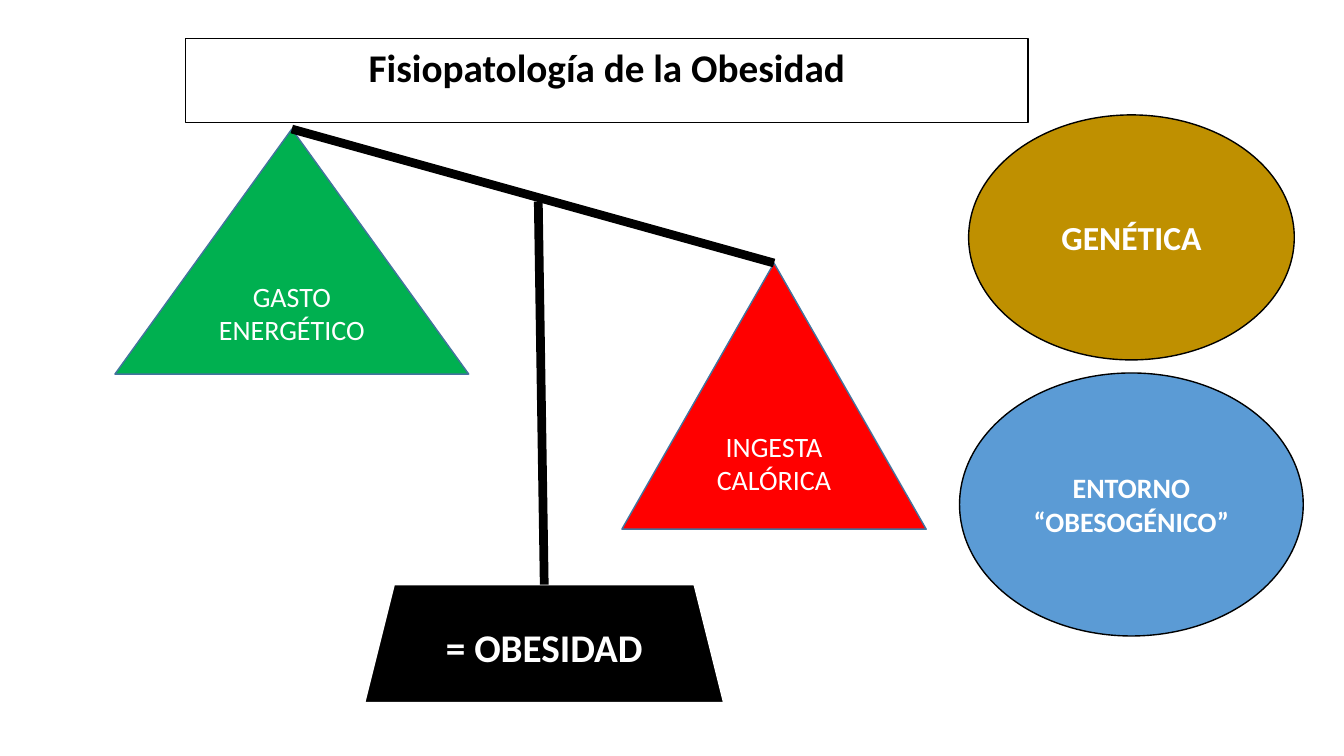
from dataclasses import dataclass

from lxml.etree import SubElement
from pptx import Presentation
from pptx.dml.color import RGBColor
from pptx.enum.shapes import MSO_CONNECTOR, MSO_SHAPE
from pptx.enum.text import MSO_ANCHOR, MSO_AUTO_SIZE, PP_ALIGN
from pptx.oxml.ns import qn
from pptx.shapes.autoshape import Shape
from pptx.slide import Slide
from pptx.text.text import TextFrame
from pptx.util import Pt


@dataclass(frozen=True)
class Theme:
    font: str = "Calibri"
    black: str = "000000"
    white: str = "FFFFFF"
    green: str = "00B050"
    red: str = "FF0000"
    gold: str = "BF9000"
    blue: str = "5B9BD5"
    pan_edge: str = "43739E"
    heading: float = 28
    factor: float = 24
    label: float = 20
    outline: float = 1
    bar: float = 6.25


@dataclass(frozen=True)
class Figure:
    kind: MSO_SHAPE
    left: float
    top: float
    width: float
    height: float
    fill: str
    edge: str
    text: str
    size: float
    bold: bool = True


THEME = Theme()
TOP_SITE = 0

EXPENDITURE_PAN = Figure(MSO_SHAPE.ISOSCELES_TRIANGLE, 82.1, 92.2, 252.7, 175, THEME.green,
                         THEME.pan_edge, "GASTO ENERGÉTICO", THEME.label, False)
INTAKE_PAN = Figure(MSO_SHAPE.ISOSCELES_TRIANGLE, 444.2, 187.9, 217.4, 190.1, THEME.red,
                    THEME.pan_edge, "INGESTA CALÓRICA", THEME.label, False)
BASE = Figure(MSO_SHAPE.TRAPEZOID, 260.6, 417.6, 256.3, 84.2, THEME.black,
              THEME.white, "= OBESIDAD", THEME.heading)
FACTORS = (
    Figure(MSO_SHAPE.OVAL, 691.9, 82.1, 232.6, 175, THEME.gold,
           THEME.black, "GENÉTICA", THEME.factor),
    Figure(MSO_SHAPE.OVAL, 685.4, 266.4, 245.5, 187.9, THEME.blue,
           THEME.black, "ENTORNO “OBESOGÉNICO”", THEME.label),
)


def write_text(frame: TextFrame, text: str, size: float, color: str, bold: bool) -> None:
    frame.word_wrap = True
    para = frame.paragraphs[0]
    para.alignment = PP_ALIGN.CENTER
    span = para.add_run()
    span.text = text
    span.font.name = THEME.font
    span.font.size = Pt(size)
    span.font.bold = bold
    span.font.color.rgb = RGBColor.from_string(color)


def paint(shape: Shape, fill: str, edge: str) -> None:
    shape.fill.solid()
    shape.fill.fore_color.rgb = RGBColor.from_string(fill)
    shape.line.color.rgb = RGBColor.from_string(edge)
    shape.line.width = Pt(THEME.outline)


def add_title(page: Slide, text: str) -> None:
    title = page.shapes.title
    title.left, title.top, title.width, title.height = Pt(132.5), Pt(27.4), Pt(601.9), Pt(41)
    paint(title, THEME.white, THEME.black)
    frame = title.text_frame
    frame.vertical_anchor = MSO_ANCHOR.TOP
    frame.auto_size = MSO_AUTO_SIZE.SHAPE_TO_FIT_TEXT
    write_text(frame, text, THEME.heading, THEME.black, True)


def add_figure(page: Slide, figure: Figure) -> Shape:
    shape = page.shapes.add_shape(figure.kind, Pt(figure.left), Pt(figure.top),
                                  Pt(figure.width), Pt(figure.height))
    shape.shadow.inherit = False
    paint(shape, figure.fill, figure.edge)
    shape.text_frame.vertical_anchor = MSO_ANCHOR.MIDDLE
    write_text(shape.text_frame, figure.text, figure.size, THEME.white, figure.bold)
    return shape


def add_bar(page: Slide, x: float, y: float, end: Shape, start: Shape | None = None) -> None:
    """Draw a thick bar from a point, or the top of start, to the top of end."""
    bar = page.shapes.add_connector(MSO_CONNECTOR.STRAIGHT, Pt(x), Pt(y), Pt(x), Pt(y))
    if start is not None:
        bar.begin_connect(start, TOP_SITE)
    bar.end_connect(end, TOP_SITE)
    bar.line.color.rgb = RGBColor.from_string(THEME.black)
    bar.line.width = Pt(THEME.bar)
    SubElement(bar.element.spPr, qn("a:effectLst"))


def main() -> None:
    deck = Presentation()
    deck.slide_width, deck.slide_height = Pt(960), Pt(540)
    page = deck.slides.add_slide(deck.slide_layouts.get_by_name("Title Only"))
    add_title(page, "Fisiopatología de la Obesidad")

    # Scale: two pans, base, beam and post
    expenditure = add_figure(page, EXPENDITURE_PAN)
    intake = add_figure(page, INTAKE_PAN)
    base = add_figure(page, BASE)
    add_bar(page, INTAKE_PAN.left, INTAKE_PAN.top, expenditure, start=intake)
    add_bar(page, 384.5, 144, base)

    # Contributing factors
    for factor in FACTORS:
        add_figure(page, factor)

    deck.save("out.pptx")


if __name__ == "__main__":
    main()
